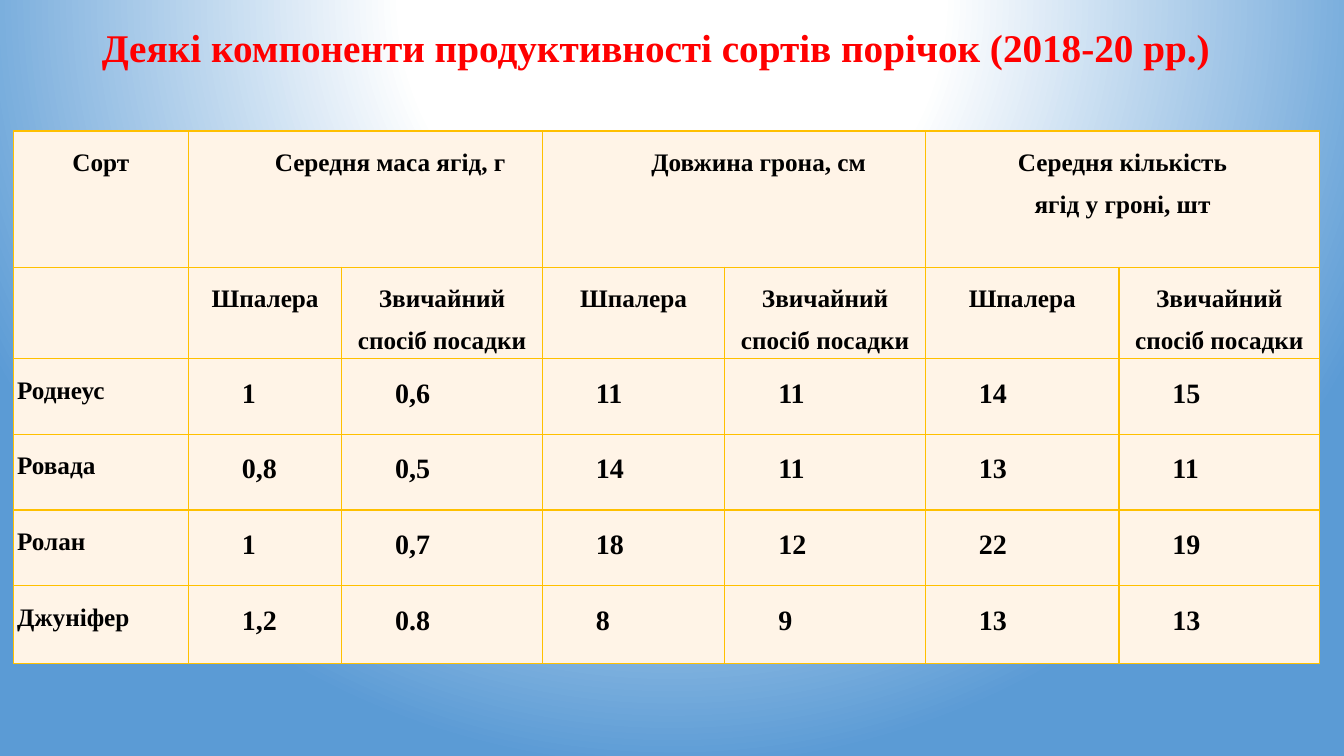
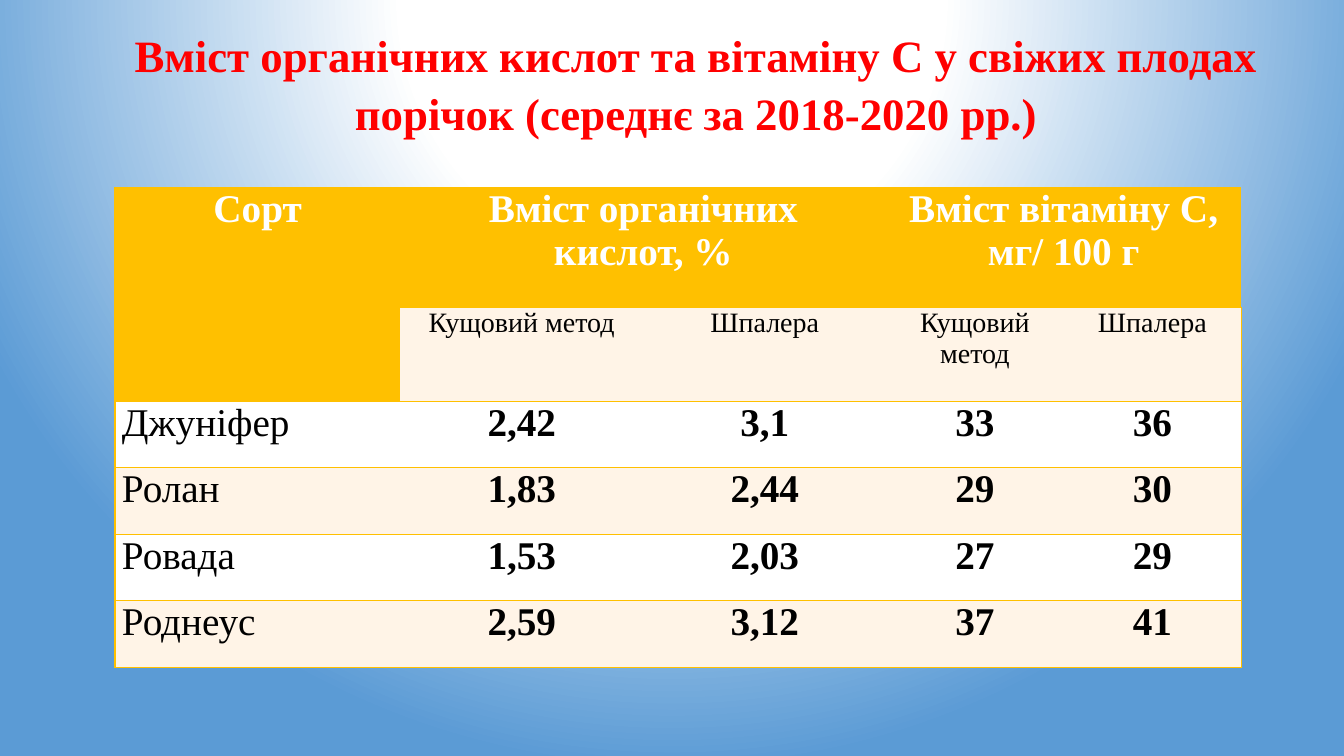
from lxml import etree
from pptx import Presentation
from pptx.dml.color import RGBColor
from pptx.enum.text import MSO_ANCHOR, MSO_AUTO_SIZE, PP_ALIGN
from pptx.oxml import parse_xml
from pptx.oxml.ns import nsdecls, qn
from pptx.util import Inches, Pt

FONT = "Times New Roman"
RED, GOLD, CREAM, WHITE, BLACK, BLUE = (
    "FF0000", "FFC000", "FFF4E7", "FFFFFF", "000000", "5B9BD5")
GRADIENT_STOPS = [(0, WHITE), (35, WHITE), (100, BLUE)]
PLAIN_TABLE_STYLE = "{2D5ABB26-0587-4C30-8999-92F81FD0307C}"

PLANTING = ["Шпалера", "Звичайний спосіб посадки"]
METHODS = ["Кущовий метод", "Шпалера"]


def yield_style(row, col):
    style = dict(size=18, bold=True, color=BLACK, fill=CREAM, spacing=1.5,
                 align=PP_ALIGN.CENTER if row < 2 else PP_ALIGN.JUSTIFY)
    if row == 0 and col in (1, 3):
        style["indent"] = 0.49
    elif row >= 2 and col > 0:
        style.update(size=20, indent=0.49)
    return style


def vitamin_style(row, col):
    header = row == 0
    variety = row >= 2 and col == 0
    return dict(size=20 if row == 1 else 28,
                bold=row != 1 and not variety,
                color=WHITE if header else BLACK,
                fill=GOLD if header else CREAM if row % 2 else WHITE,
                align=PP_ALIGN.LEFT if variety else PP_ALIGN.CENTER)


SLIDES = [
    dict(
        title="Деякі компоненти продуктивності сортів порічок (2018-20 рр.)",
        title_box=(0.91, 0.21, 12.16, 0.55),
        title_size=28, title_spacing=0.96, title_align=PP_ALIGN.LEFT,
        table_at=(0.13, 1.3),
        columns=[1.74, 1.52, 1.99, 1.81, 1.99, 1.92, 1.99],
        heights=[1.35, 0.89, 0.75, 0.75, 0.75, 0.77],
        margins=(0.04, 0.04), inner_verticals=True, style=yield_style,
        merges=[(0, 1, 0, 2), (0, 3, 0, 4), (0, 5, 0, 6)],
        rows=[
            ["Сорт", "Середня маса ягід, г", "", "Довжина грона, см", "",
             "Середня кількість\nягід у гроні, шт", ""],
            ["", *PLANTING * 3],
            ["Роднеус", "1", "0,6", "11", "11", "14", "15"],
            ["Ровада", "0,8", "0,5", "14", "11", "13", "11"],
            ["Ролан", "1", "0,7", "18", "12", "22", "19"],
            ["Джуніфер", "1,2", "0.8", "8", "9", "13", "13"],
        ],
    ),
    dict(
        title="Вміст органічних кислот та вітаміну С у свіжих плодах порічок "
              "(середнє за 2018-2020 рр.)",
        title_box=(0.48, 0.19, 12.85, 1.25),
        title_size=32, title_spacing=1.07, title_align=PP_ALIGN.CENTER,
        table_at=(1.14, 1.86),
        columns=[2.83, 2.41, 2.41, 1.76, 1.76],
        heights=[1.19, 0.93, 0.66, 0.66, 0.66, 0.66],
        margins=(0.07, 0), inner_verticals=False, style=vitamin_style,
        merges=[(0, 0, 1, 0), (0, 1, 0, 2), (0, 3, 0, 4)],
        rows=[
            ["Сорт", "Вміст органічних\nкислот, %", "",
             "Вміст вітаміну С,\nмг/ 100 г", ""],
            ["", *METHODS * 2],
            ["Джуніфер", "2,42", "3,1", "33", "36"],
            ["Ролан", "1,83", "2,44", "29", "30"],
            ["Ровада", "1,53", "2,03", "27", "29"],
            ["Роднеус", "2,59", "3,12", "37", "41"],
        ],
    ),
]


def rgb(color):
    return RGBColor.from_string(color)


def set_font(paragraph, size, bold, color):
    font = paragraph.font
    font.name, font.size, font.bold = FONT, Pt(size), bold
    font.color.rgb = rgb(color)


def set_background(master):
    """Give every slide the same radial gradient."""
    master.background.fill.solid()
    properties = master.element.find(".//" + qn("p:bgPr"))
    stops = "".join(
        f'<a:gs pos="{position * 1000}"><a:srgbClr val="{color}"/></a:gs>'
        for position, color in GRADIENT_STOPS)
    gradient = parse_xml(
        f'<a:gradFill rotWithShape="1" {nsdecls("a")}><a:gsLst>{stops}</a:gsLst>'
        '<a:path path="circle">'
        '<a:fillToRect l="50000" t="-80000" r="50000" b="180000"/>'
        '</a:path></a:gradFill>')
    properties.replace(properties.find(qn("a:solidFill")), gradient)


def add_title(slide, content):
    title = slide.shapes.title
    title.left, title.top, title.width, title.height = map(
        Inches, content["title_box"])
    frame = title.text_frame
    frame.text = content["title"]
    frame.word_wrap = True
    frame.auto_size = MSO_AUTO_SIZE.NONE
    frame.vertical_anchor = MSO_ANCHOR.TOP
    paragraph = frame.paragraphs[0]
    paragraph.alignment = content["title_align"]
    paragraph.line_spacing = content["title_spacing"]
    set_font(paragraph, content["title_size"], True, RED)


def set_borders(cell, sides):
    """Draw gold lines on the given sides, in the order L, R, T, B."""
    properties = cell._tc.get_or_add_tcPr()
    for index, side in enumerate(sides):
        properties.insert(index, parse_xml(
            f'<a:ln{side} w="{Pt(1)}" {nsdecls("a")}><a:solidFill>'
            f'<a:srgbClr val="{GOLD}"/></a:solidFill></a:ln{side}>'))


def format_cell(cell, text, margins, size, bold, color, fill, align,
                spacing=1.0, indent=0):
    cell.text = text
    cell.margin_left = cell.margin_right = Inches(margins[0])
    cell.margin_top = cell.margin_bottom = Inches(margins[1])
    cell.fill.solid()
    cell.fill.fore_color.rgb = rgb(fill)
    for paragraph in cell.text_frame.paragraphs:
        paragraph.alignment = align
        paragraph.line_spacing = spacing
        if indent:
            paragraph._p.get_or_add_pPr().set("indent", str(Inches(indent)))
        set_font(paragraph, size, bold, color)


def add_data_table(slide, content):
    columns, heights = content["columns"], content["heights"]
    frame = slide.shapes.add_table(
        len(heights), len(columns), *map(Inches, content["table_at"]),
        Inches(sum(columns)), Inches(sum(heights)))
    frame.element.find(".//" + qn("a:tableStyleId")).text = PLAIN_TABLE_STYLE
    table = frame.table
    table.first_row = table.horz_banding = False
    for column, width in zip(table.columns, columns):
        column.width = Inches(width)
    for row, height in zip(table.rows, heights):
        row.height = Inches(height)

    last = len(columns) - 1
    for r, texts in enumerate(content["rows"]):
        for c, text in enumerate(texts):
            cell = table.cell(r, c)
            format_cell(cell, text, content["margins"], **content["style"](r, c))
            left = "L" if content["inner_verticals"] or c == 0 else ""
            right = "R" if content["inner_verticals"] or c == last else ""
            set_borders(cell, left + right + "TB")
    for top, first, bottom, end in content["merges"]:
        table.cell(top, first).merge(table.cell(bottom, end))


def main():
    deck = Presentation()
    deck.slide_width, deck.slide_height = Inches(13.33), Inches(7.5)
    set_background(deck.slide_master)
    title_only = deck.slide_layouts[5]
    for content in SLIDES:
        slide = deck.slides.add_slide(title_only)
        add_title(slide, content)
        add_data_table(slide, content)
    deck.save("out.pptx")


if __name__ == "__main__":
    main()
